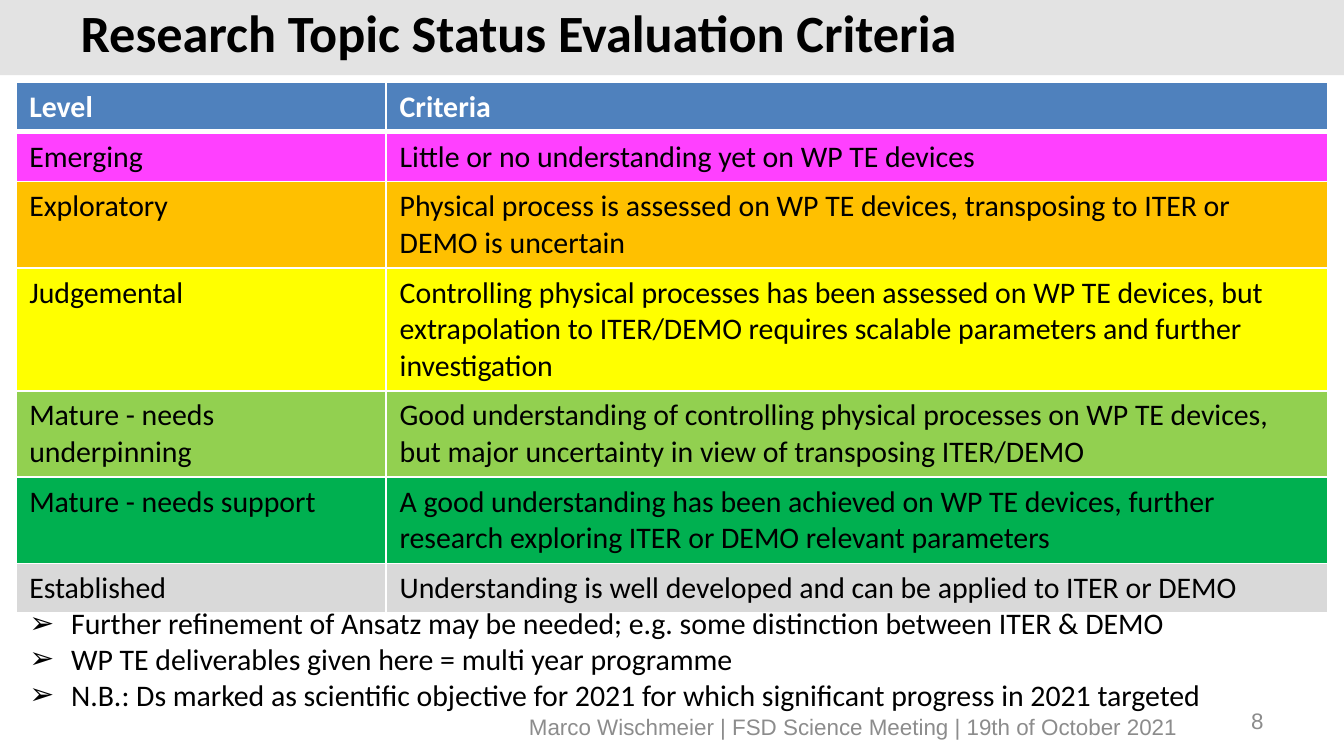
import pptx
import pptx.dml.color
import pptx.enum.shapes
import pptx.enum.text
import pptx.oxml
import pptx.oxml.ns
import pptx.util

Cm = pptx.util.Cm
Pt = pptx.util.Pt
PP_ALIGN = pptx.enum.text.PP_ALIGN
MSO_ANCHOR = pptx.enum.text.MSO_ANCHOR
NAMESPACE = pptx.oxml.ns.nsdecls("a")

COLORS = {
    "band": "E3E3E3",
    "black": "000000",
    "white": "FFFFFF",
    "footer": "8C8C8C",
    "header": "4F81BD",
    "emerging": "FF40FF",
    "exploratory": "FFC000",
    "judgemental": "FFFF00",
    "underpinning": "92D050",
    "support": "00B050",
    "established": "D9D9D9",
}


def add_run(paragraph, text, size, color, font="Calibri", bold=False):
    run = paragraph.add_run()
    run.text = text
    run.font.size = Pt(size)
    run.font.name = font
    run.font.bold = bold
    run.font.color.rgb = pptx.dml.color.RGBColor.from_string(COLORS[color])


def set_border(cell, side, width):
    cell._tc.get_or_add_tcPr().append(pptx.oxml.parse_xml(
        f'<a:{side} {NAMESPACE} w="{Pt(width)}"><a:solidFill>'
        f'<a:srgbClr val="{COLORS["white"]}"/></a:solidFill></a:{side}>'))


presentation = pptx.Presentation()
presentation.slide_width = Cm(25.4)
presentation.slide_height = Cm(14.28)
slide = presentation.slides.add_slide(presentation.slide_layouts[1])

band = slide.shapes.add_shape(
    pptx.enum.shapes.MSO_SHAPE.RECTANGLE, 0, 0, presentation.slide_width, Cm(1.42))
band.shadow.inherit = False
band.fill.solid()
band.fill.fore_color.rgb = pptx.dml.color.RGBColor.from_string(COLORS["band"])
band.line.fill.background()
slide.shapes._spTree.insert(2, band._element)

title = slide.shapes.title
title.left, title.top, title.width, title.height = Cm(1.27), Cm(0.15), Cm(22.22), Cm(0.97)
title.text_frame.auto_size = pptx.enum.text.MSO_AUTO_SIZE.NONE
title.text_frame.vertical_anchor = MSO_ANCHOR.MIDDLE
paragraph = title.text_frame.paragraphs[0]
paragraph.alignment = PP_ALIGN.LEFT
paragraph.line_spacing = Pt(32)
add_run(paragraph, "Research Topic Status Evaluation Criteria", 28, "black", bold=True)

footers = [
    ("Marco Wischmeier | FSD Science Meeting | 19th of October 2021",
     8.79, 13.21, 14.68, 1.04, PP_ALIGN.CENTER),
    ("8", 18.21, 13.23, 5.92, 0.76, PP_ALIGN.RIGHT),
]
for text, left, top, width, height, alignment in footers:
    box = slide.shapes.add_textbox(Cm(left), Cm(top), Cm(width), Cm(height))
    box.text_frame.word_wrap = True
    box.text_frame.vertical_anchor = MSO_ANCHOR.MIDDLE
    paragraph = box.text_frame.paragraphs[0]
    paragraph.alignment = alignment
    add_run(paragraph, text, 12, "footer", font="Arial")

levels = [
    ("header", 1, "Level", "Criteria"),
    ("emerging", 1, "Emerging", "Little or no understanding yet on WP TE devices"),
    ("exploratory", 2, "Exploratory",
     "Physical process is assessed on WP TE devices, transposing to ITER or DEMO is uncertain"),
    ("judgemental", 3, "Judgemental",
     "Controlling physical processes has been assessed on WP TE devices, but extrapolation "
     "to ITER/DEMO requires scalable parameters and further investigation"),
    ("underpinning", 2, "Mature - needs underpinning",
     "Good understanding of controlling physical processes on WP TE devices, "
     "but major uncertainty in view of transposing ITER/DEMO"),
    ("support", 2, "Mature - needs support",
     "A good understanding has been achieved on WP TE devices, "
     "further research exploring ITER or DEMO relevant parameters"),
    ("established", 1, "Established",
     "Understanding is well developed and can be applied to ITER or DEMO"),
]
table = slide.shapes.add_table(
    len(levels), 2, Cm(0.3), Cm(1.55), Cm(24.8), Cm(9.9)).table
table.columns[0].width = Cm(7)
table.columns[1].width = Cm(17.8)
for row, (color, lines, *texts) in enumerate(levels):
    is_header = row == 0
    table.rows[row].height = Cm(0.25 + 0.69 * lines)
    for column, text in enumerate(texts):
        cell = table.cell(row, column)
        set_border(cell, "lnL", 1)
        set_border(cell, "lnR", 1)
        set_border(cell, "lnT", 3 if row == 1 else 1)
        set_border(cell, "lnB", 3 if is_header else 1)
        cell.fill.solid()
        cell.fill.fore_color.rgb = pptx.dml.color.RGBColor.from_string(COLORS[color])
        add_run(cell.text_frame.paragraphs[0], text, 16,
                "white" if is_header else "black", bold=is_header)

notes = [
    "Further refinement of Ansatz may be needed; e.g. some distinction between ITER & DEMO",
    "WP TE deliverables given here = multi year programme",
    "N.B.: Ds marked as scientific objective for 2021 for which significant progress in 2021 targeted",
]
body = slide.placeholders[1]
body.left, body.top, body.width, body.height = Cm(0.3), Cm(11.3), Cm(24.8), Cm(2.31)
body.text_frame.auto_size = pptx.enum.text.MSO_AUTO_SIZE.NONE
body.text_frame.vertical_anchor = MSO_ANCHOR.TOP
for index, note in enumerate(notes):
    paragraph = body.text_frame.add_paragraph() if index else body.text_frame.paragraphs[0]
    properties = paragraph._p.get_or_add_pPr()
    properties.set("marL", str(Cm(0.79)))
    properties.set("indent", str(Cm(-0.79)))
    properties.append(pptx.oxml.parse_xml(f'<a:buFont {NAMESPACE} typeface="Arial"/>'))
    properties.append(pptx.oxml.parse_xml(f'<a:buChar {NAMESPACE} char="➢"/>'))
    paragraph.space_before = Pt(0)
    add_run(paragraph, note, 16, "black")
slide.shapes._spTree.append(body._element)

presentation.save("out.pptx")
